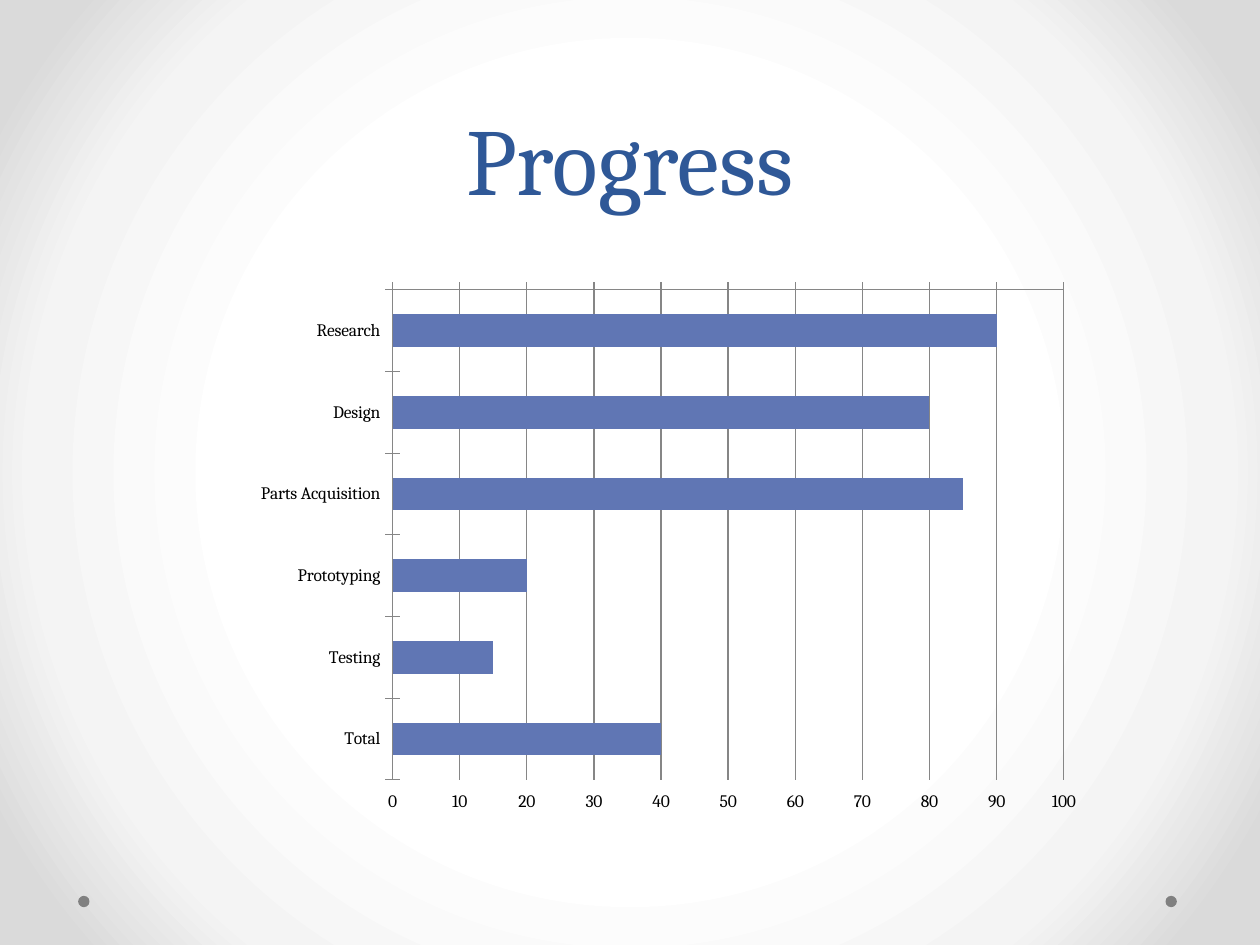
"""Build a progress slide with a horizontal bar chart on a radial background."""
from lxml import etree
from pptx import Presentation
from pptx import util as u
from pptx.chart import data
from pptx.dml import color
from pptx.enum import chart as charts, shapes, text
from pptx.oxml import ns, parse_xml

COLORS = {"title": "2F5897", "bar": "6076B4", "line": "868686",
          "dot": "808080", "label": "000000"}
FONT = "Cambria"
BACKGROUND_STOPS = [(50, "FFFFFF"), (76, "F4F4F4"), (92, "DADADA")]
PROGRESS = {"Research": 90, "Design": 80, "Parts Acquisition": 85,
            "Prototyping": 20, "Testing": 15, "Total": 40}
PLOT_LAYOUT = {"layoutTarget": "inner", "xMode": "edge", "yMode": "edge",
               "x": 0.2, "y": 0.05, "w": 0.78, "h": 0.88}


def format_font(font, size, hex_color):
    font.name = FONT
    font.size = u.Pt(size)
    font.bold = False
    font.color.rgb = color.RGBColor.from_string(hex_color)


presentation = Presentation()
presentation.slide_width = u.Inches(10)
presentation.slide_height = u.Inches(7.5)
slide = presentation.slides.add_slide(presentation.slide_layouts[5])

slide.background.fill.gradient()
gradient = slide.background.fill._xPr.find(ns.qn("a:gradFill"))
stops = "".join(f'<a:gs pos="{position * 1000}"><a:srgbClr val="{value}"/></a:gs>'
                for position, value in BACKGROUND_STOPS)
gradient.getparent().replace(gradient, parse_xml(
    f'<a:gradFill {ns.nsdecls("a")} rotWithShape="1"><a:gsLst>{stops}</a:gsLst>'
    '<a:path path="circle"><a:fillToRect l="50000" t="50000" r="50000" b="50000"/>'
    '</a:path></a:gradFill>'))

for left in (9.25, 0.62):
    dot = slide.shapes.add_shape(shapes.MSO_SHAPE.OVAL, u.Inches(left), u.Inches(7.11),
                                 u.Inches(0.09), u.Inches(0.09))
    dot.shadow.inherit = False
    dot.fill.solid()
    dot.fill.fore_color.rgb = color.RGBColor.from_string(COLORS["dot"])
    dot.line.fill.background()

title = slide.shapes.title
title.left, title.top = u.Inches(0.5), u.Inches(0)
title.width, title.height = u.Inches(9), u.Inches(1.75)
title.text_frame.text = "Progress"
title.text_frame.auto_size = text.MSO_AUTO_SIZE.NONE
title.text_frame.vertical_anchor = text.MSO_ANCHOR.BOTTOM
paragraph = title.text_frame.paragraphs[0]
paragraph.alignment = text.PP_ALIGN.CENTER
paragraph.line_spacing = u.Pt(58)
format_font(paragraph.runs[0].font, 54, COLORS["title"])

chart_data = data.CategoryChartData()
chart_data.categories = list(PROGRESS)
chart_data.add_series("Series 1", list(PROGRESS.values()))
chart = slide.shapes.add_chart(
    charts.XL_CHART_TYPE.BAR_CLUSTERED, u.Inches(1.75), u.Inches(2.08),
    u.Inches(6.83), u.Inches(4.42), chart_data).chart
chart.has_legend = False
chart.has_title = False
format_font(chart.font, 10, COLORS["label"])

plot = chart.plots[0]
plot.vary_by_categories = False
plot.gap_width = 150
bars = plot.series[0].format.fill
bars.solid()
bars.fore_color.rgb = color.RGBColor.from_string(COLORS["bar"])

category_axis, value_axis = chart.category_axis, chart.value_axis
category_axis.reverse_order = True
value_axis.minimum_scale, value_axis.maximum_scale = 0, 100
value_axis.major_unit = 10
value_axis.has_major_gridlines = True
value_axis.tick_label_position = charts.XL_TICK_LABEL_POSITION.HIGH
for axis in (category_axis, value_axis):
    axis.major_tick_mark = charts.XL_TICK_MARK.CROSS
    axis.minor_tick_mark = charts.XL_TICK_MARK.NONE
for lined in (category_axis, value_axis, value_axis.major_gridlines):
    lined.format.line.width = u.Pt(0.75)
    lined.format.line.color.rgb = color.RGBColor.from_string(COLORS["line"])

plot_area = chart._chartSpace.chart.plotArea
for layout in plot_area.findall(ns.qn("c:layout")):
    plot_area.remove(layout)
layout = etree.Element(ns.qn("c:layout"))
manual_layout = etree.SubElement(layout, ns.qn("c:manualLayout"))
for name, value in PLOT_LAYOUT.items():
    etree.SubElement(manual_layout, ns.qn(f"c:{name}"), val=str(value))
plot_area.insert(0, layout)

presentation.save("out.pptx")
